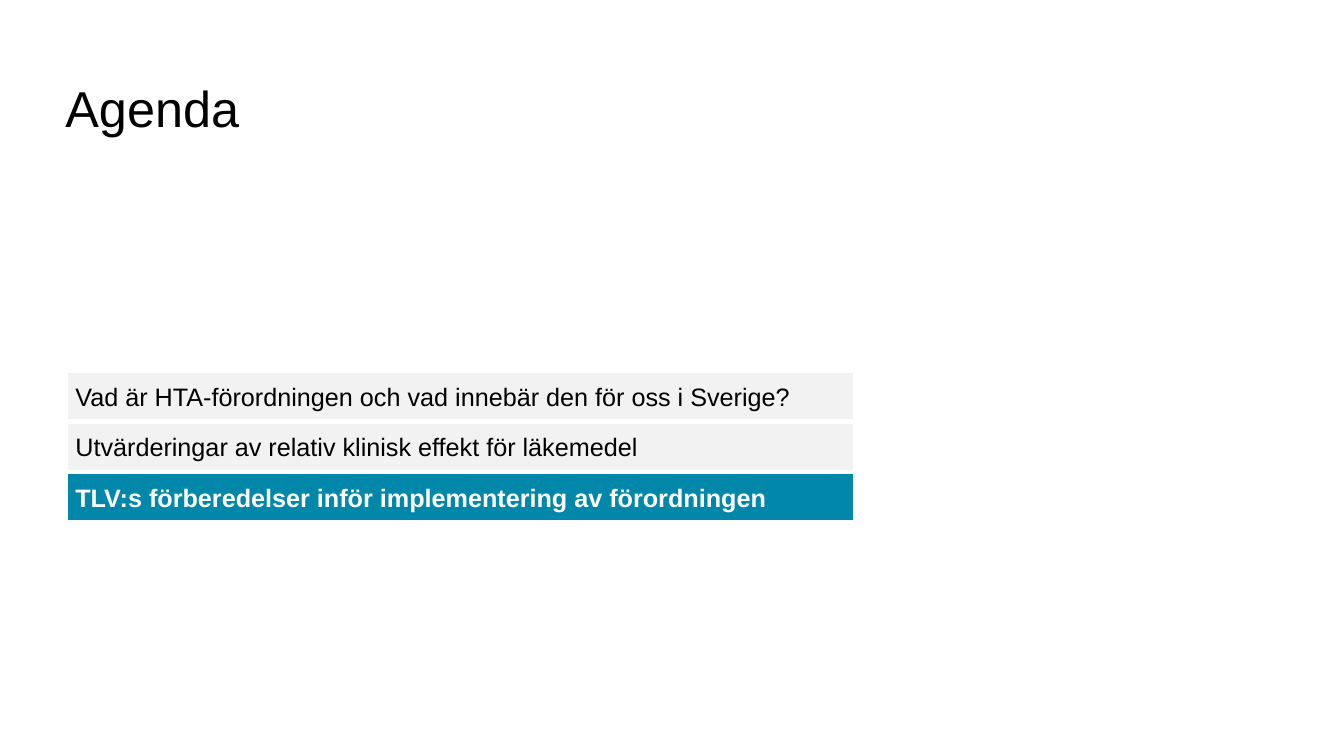
from dataclasses import dataclass

from pptx import Presentation
from pptx import util as u
from pptx.dml.color import RGBColor
from pptx.enum import shapes, text


@dataclass(frozen=True)
class Theme:
    font: str = "Arial"
    title_size: int = 36
    item_size: int = 18
    ink: str = "000000"
    paper: str = "FFFFFF"
    muted: str = "F2F2F2"
    accent: str = "0087A9"


def write_text(shape, words, *, font, size, color, bold=False, wrap=True,
               margins=(0, 0, 0, 0)):
    """Put one left-aligned, vertically centred paragraph in a shape."""
    frame = shape.text_frame
    frame.word_wrap = wrap
    frame.vertical_anchor = text.MSO_ANCHOR.MIDDLE
    (frame.margin_left, frame.margin_top,
     frame.margin_right, frame.margin_bottom) = map(u.Cm, margins)
    para = frame.paragraphs[0]
    para.alignment = text.PP_ALIGN.LEFT
    span = para.add_run()
    span.text = words
    span.font.name = font
    span.font.size = u.Pt(size)
    span.font.bold = bold
    span.font.color.rgb = RGBColor.from_string(color)


class AgendaPage:
    def __init__(self, page, theme):
        self.page = page
        self.theme = theme

    def title(self, words, left, top, width, height):
        box = self.page.shapes.add_textbox(*map(u.Cm, (left, top, width, height)))
        write_text(box, words, font=self.theme.font, size=self.theme.title_size,
                   color=self.theme.ink)

    def item(self, words, left, top, width, height, current=False):
        theme = self.theme
        bar = self.page.shapes.add_shape(
            shapes.MSO_SHAPE.RECTANGLE, *map(u.Cm, (left, top, width, height)))
        bar.shadow.inherit = False
        bar.fill.solid()
        bar.fill.fore_color.rgb = RGBColor.from_string(
            theme.accent if current else theme.muted)
        bar.line.color.rgb = RGBColor.from_string(theme.paper)
        bar.line.width = u.Pt(3)
        write_text(bar, words, font=theme.font, size=theme.item_size,
                   color=theme.paper if current else theme.ink, bold=current,
                   wrap=False, margins=(0.25, 0.25, 0, 0.25))


def main():
    deck = Presentation()
    deck.slide_width, deck.slide_height = u.Cm(33.87), u.Cm(19.05)
    agenda = AgendaPage(deck.slides.add_slide(deck.slide_layouts[6]), Theme())

    # Heading
    left = 1.65
    agenda.title("Agenda", left, 1.68, 30.56, 2.06)

    # Agenda items, the last one being the current section
    items = (
        "Vad är HTA-förordningen och vad innebär den för oss i Sverige?",
        "Utvärderingar av relativ klinisk effekt för läkemedel",
        "TLV:s förberedelser inför implementering av förordningen",
    )
    first_top, row_height = 9.35, 1.27
    for row, words in enumerate(items):
        agenda.item(words, left, first_top + row * row_height, 19.89, row_height,
                    current=row == len(items) - 1)

    deck.save("out.pptx")


if __name__ == "__main__":
    main()
